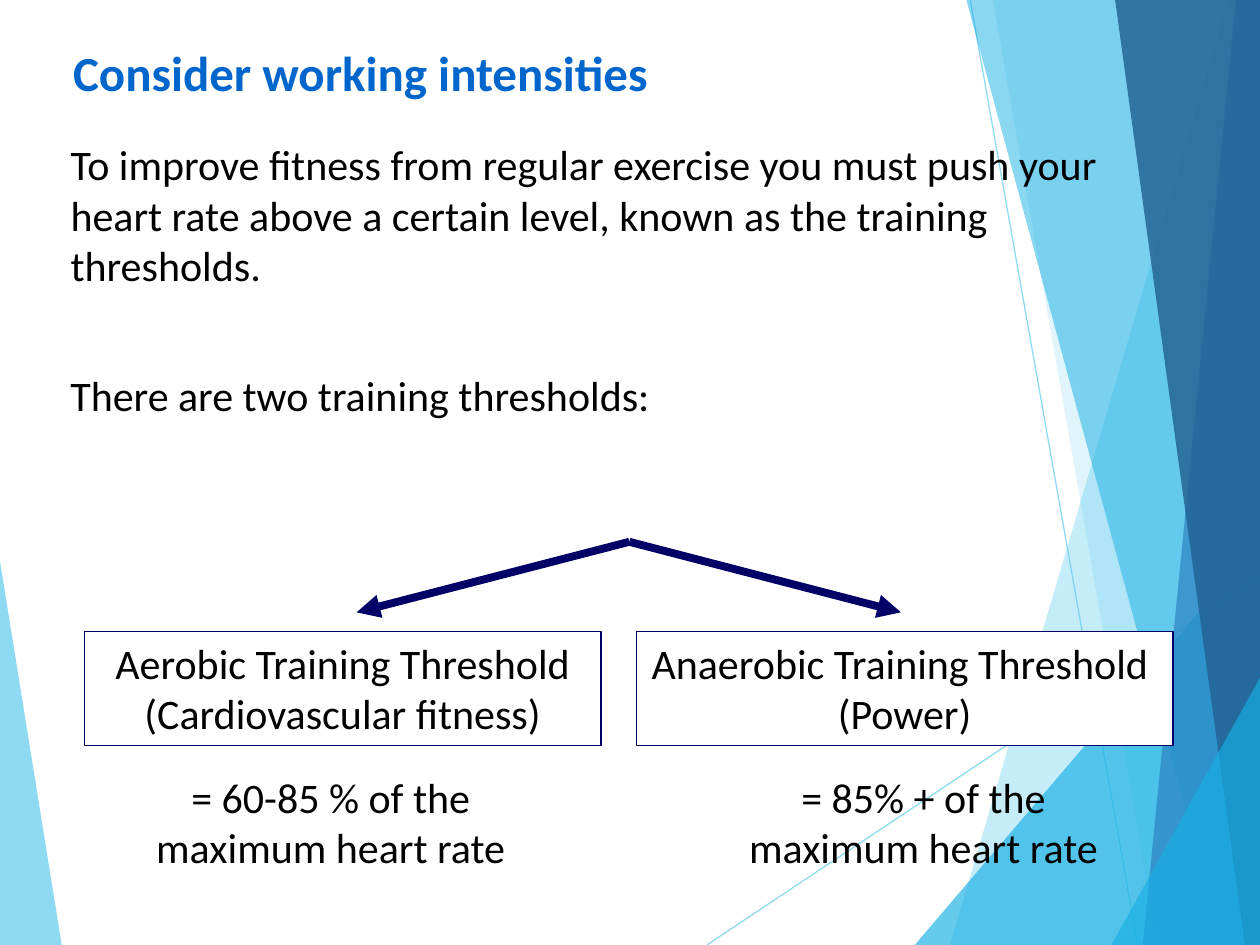
"""Build a slide on aerobic and anaerobic training thresholds."""
from dataclasses import dataclass

from lxml import etree
from pptx import Presentation
from pptx import util as u
from pptx.dml.color import RGBColor
from pptx.enum import shapes, text
from pptx.oxml.ns import qn

COLUMN = ROW = u.Inches(0.1)
COLUMNS, ROWS = 100, 75

SKY = RGBColor(0x5F, 0xCB, 0xEF)
CYAN = RGBColor(0x17, 0xB0, 0xE4)
BLUE = RGBColor(0x2E, 0x83, 0xC3)
DEEP = RGBColor(0x22, 0x62, 0x92)
NAVY = RGBColor(0x00, 0x00, 0x66)
HEADING = RGBColor(0x00, 0x66, 0xCC)
BLACK = RGBColor(0, 0, 0)
WHITE = RGBColor(0xFF, 0xFF, 0xFF)


@dataclass(frozen=True)
class Facet:
    points: tuple
    color: RGBColor
    opacity: int


@dataclass(frozen=True)
class Stroke:
    start: tuple
    end: tuple
    color: RGBColor
    width: float
    opacity: int = 100
    arrow: bool = False


@dataclass(frozen=True)
class Area:
    left: float
    top: float
    width: float
    height: float


@dataclass(frozen=True)
class Label:
    wording: str
    area: Area
    centered: bool = True
    framed: bool = False
    wrap: bool = True


LEFT_FACET = Facet(((-0.1, 43.9), (4.9, ROWS), (-0.1, ROWS)), SKY, 70)
RAYS = (
    Stroke((56.1, ROWS), (100.1, 45.7), SKY, 0.75, 70),
    Stroke((77, 0), (90.3, ROWS), SKY, 0.75, 70),
)
RIGHT_FACETS = (
    Facet(((97.5, 0), (75.4, ROWS), (COLUMNS, ROWS), (COLUMNS, 0)), SKY, 36),
    Facet(((78.8, 0), (91.9, ROWS), (COLUMNS, ROWS), (COLUMNS, 0)), SKY, 20),
    Facet(((72.6, ROWS), (COLUMNS, 42.9), (COLUMNS, ROWS)), CYAN, 66),
    Facet(((76.7, 0), (97, ROWS), (COLUMNS, ROWS), (COLUMNS, 0)), CYAN, 50),
    Facet(((98.1, 0), (90.7, ROWS), (COLUMNS, ROWS), (COLUMNS, 0)), BLUE, 70),
    Facet(((88.5, 0), (98.8, ROWS), (COLUMNS, ROWS), (COLUMNS, 0)), DEEP, 82),
    Facet(((88.2, ROWS), (COLUMNS, 53.8), (COLUMNS, ROWS)), CYAN, 66),
)
LABELS = (
    Label("There are two training thresholds:", Area(4.6, 28.8, 54.6, 5.1), centered=False),
    Label("= 60-85 % of the maximum heart rate", Area(7.5, 60.7, 37.5, 9.1)),
    Label("= 85% + of the maximum heart rate", Area(55.8, 60.7, 35, 9.1)),
    Label("Aerobic Training Threshold (Cardiovascular fitness)",
          Area(6.7, 50.1, 41, 9.1), framed=True),
    Label("Anaerobic Training Threshold \v(Power)",
          Area(50.5, 50.1, 42.6, 9.1), framed=True, wrap=False),
)
ARROWS = tuple(
    Stroke((49.95, 43), (tip, 48.6), NAVY, 4.5, arrow=True) for tip in (28.3, 71.5)
)
TITLE = "Consider working intensities"
INTRO = ("To improve fitness from regular exercise you must push your heart rate "
         "above a certain level, known as the training thresholds.")


def place(area: Area) -> tuple:
    """Turn an area of the grid into slide lengths."""
    return (round(area.left * COLUMN), round(area.top * ROW),
            round(area.width * COLUMN), round(area.height * ROW))


def set_opacity(shape, percent: int) -> None:
    """Make the first colour of a shape partly transparent."""
    color = next(shape.element.spPr.iter(qn("a:srgbClr")))
    etree.SubElement(color, qn("a:alpha"), val=str(percent * 1000))


def draw_facet(slide, facet: Facet) -> None:
    """Draw one translucent background polygon."""
    points = [(round(x * COLUMN), round(y * ROW)) for x, y in facet.points]
    builder = slide.shapes.build_freeform(*points[0])
    builder.add_line_segments(points[1:], close=True)
    shape = builder.convert_to_shape()
    shape.shadow.inherit = False
    shape.fill.solid()
    shape.fill.fore_color.rgb = facet.color
    shape.line.fill.background()
    set_opacity(shape, facet.opacity)


def draw_stroke(slide, stroke: Stroke) -> None:
    """Draw a straight line, with an arrowhead where asked."""
    ends = [round(x * COLUMN) for x in (*stroke.start, *stroke.end)]
    connector = slide.shapes.add_connector(shapes.MSO_CONNECTOR.STRAIGHT, *ends)
    connector.line.color.rgb = stroke.color
    connector.line.width = u.Pt(stroke.width)
    if stroke.opacity < 100:
        set_opacity(connector, stroke.opacity)
    if stroke.arrow:
        etree.SubElement(connector.line._get_or_add_ln(), qn("a:tailEnd"), type="triangle")
    etree.SubElement(connector.element.spPr, qn("a:effectLst"))


def write(shape, wording: str, size: int = 24, color: RGBColor = BLACK,
          bold: bool = False, centered: bool = False, wrap: bool = True) -> None:
    """Set and format the single paragraph of a shape."""
    frame = shape.text_frame
    frame.text = wording
    frame.word_wrap = wrap
    frame.auto_size = text.MSO_AUTO_SIZE.NONE
    frame.vertical_anchor = text.MSO_ANCHOR.TOP
    paragraph = frame.paragraphs[0]
    paragraph.alignment = text.PP_ALIGN.CENTER if centered else text.PP_ALIGN.LEFT
    paragraph.space_before = u.Pt(0)
    for run in paragraph.runs:
        run.font.name = "Calibri"
        run.font.size = u.Pt(size)
        run.font.bold = bold
        run.font.color.rgb = color


def draw_label(slide, label: Label) -> None:
    """Draw a text box or a framed rectangle with its wording."""
    if label.framed:
        shape = slide.shapes.add_shape(shapes.MSO_SHAPE.RECTANGLE, *place(label.area))
        shape.shadow.inherit = False
        shape.fill.solid()
        shape.fill.fore_color.rgb = WHITE
        shape.line.color.rgb = NAVY
        shape.line.width = u.Pt(0.75)
    else:
        shape = slide.shapes.add_textbox(*place(label.area))
    write(shape, label.wording, centered=label.centered, wrap=label.wrap)


def bring_forward(placeholder, area: Area) -> None:
    """Move a placeholder to its area, in front of the other shapes."""
    placeholder.left, placeholder.top, placeholder.width, placeholder.height = place(area)
    placeholder.element.getparent().append(placeholder.element)


def main() -> None:
    """Build and save the presentation."""
    presentation = Presentation()
    presentation.slide_width = COLUMNS * COLUMN
    presentation.slide_height = ROWS * ROW
    slide = presentation.slides.add_slide(presentation.slide_layouts[1])
    title, body = slide.placeholders

    draw_facet(slide, LEFT_FACET)
    for ray in RAYS:
        draw_stroke(slide, ray)
    for facet in RIGHT_FACETS:
        draw_facet(slide, facet)
    for label in LABELS:
        draw_label(slide, label)
    for arrow in ARROWS:
        draw_stroke(slide, arrow)

    bring_forward(body, Area(4.6, 10.5, 89.9, 13.1))
    write(body, INTRO)
    properties = body.text_frame.paragraphs[0]._p.get_or_add_pPr()
    properties.set("marL", "0")
    properties.set("indent", "0")
    etree.SubElement(properties, qn("a:buNone"))

    bring_forward(title, Area(4.8, 2.9, 87.2, 5.7))
    write(title, TITLE, size=28, color=HEADING, bold=True)
    presentation.save("out.pptx")


if __name__ == "__main__":
    main()
